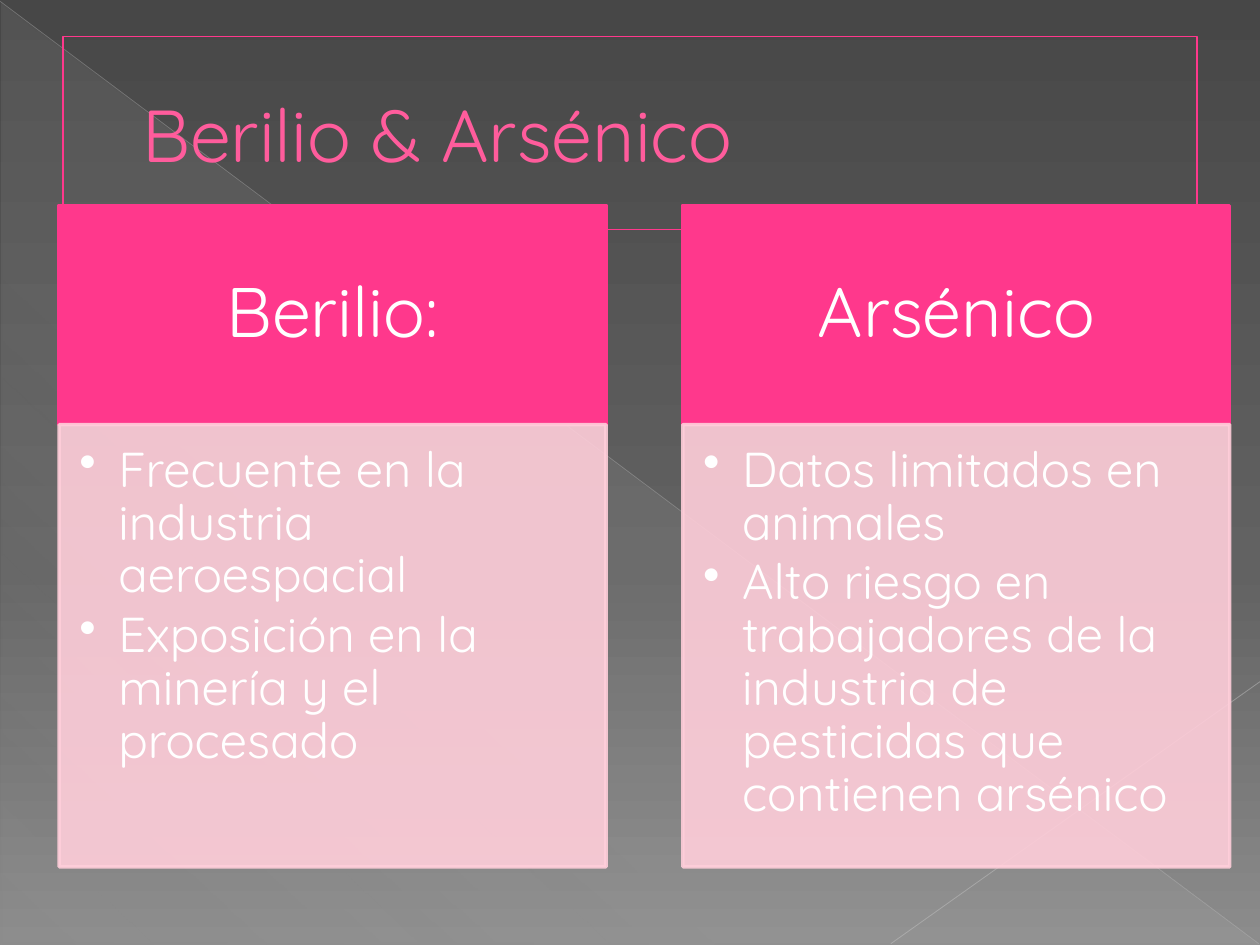
import pptx
import pptx.util
import pptx.dml.color
import pptx.enum.shapes
import pptx.enum.text
import pptx.oxml.ns
from lxml import etree

Inches = pptx.util.Inches
Pt = pptx.util.Pt
RGBColor = pptx.dml.color.RGBColor
Shape = pptx.enum.shapes.MSO_SHAPE
Anchor = pptx.enum.text.MSO_ANCHOR
Align = pptx.enum.text.PP_ALIGN
qn = pptx.oxml.ns.qn

FONT = "Quicksand"
PINK = RGBColor(0xFF, 0x38, 0x8C)
TITLE_PINK = RGBColor(0xFF, 0x5C, 0x9C)
TITLE_OUTLINE = RGBColor(0xB1, 0x27, 0x61)
PALE_PINK = RGBColor(0xFF, 0xCE, 0xDA)
WHITE = RGBColor(0xFF, 0xFF, 0xFF)
DARK_GRAY = RGBColor(0x47, 0x47, 0x47)
MID_GRAY = RGBColor(0x62, 0x62, 0x62)
LIGHT_GRAY = RGBColor(0x8C, 0x8C, 0x8C)
SHEEN = RGBColor(0xD2, 0xD2, 0xD2)
DIAGONAL_GRAY = RGBColor(0xBF, 0xBF, 0xBF)
CORNER_GRAY = RGBColor(0xC6, 0xC6, 0xC6)

COLUMN_LEFT, COLUMN_STEP, COLUMN_WIDTH = 0.47, 4.95, 4.34
HEADER_TOP, HEADER_HEIGHT, BODY_HEIGHT = 1.63, 1.74, 3.51
COLUMNS = [
    ("Berilio:", ["Frecuente en la industria aeroespacial",
                  "Exposición en la minería y el procesado"]),
    ("Arsénico", ["Datos limitados en animales",
                  "Alto riesgo en trabajadores de la industria de pesticidas "
                  "que contienen arsénico"]),
]


def add_color(parent, color, opacity=100):
    """Append an RGB colour with an opacity in percent."""
    srgb = etree.SubElement(parent, qn("a:srgbClr"), val=str(color))
    if opacity < 100:
        etree.SubElement(srgb, qn("a:alpha"), val=str(opacity * 1000))


def set_opacity(element, opacity):
    """Give every colour of the element's own properties an opacity."""
    for srgb in element.spPr.iter(qn("a:srgbClr")):
        etree.SubElement(srgb, qn("a:alpha"), val=str(opacity * 1000))


def set_gradient(fill, element, stops, angle):
    """Fill with a linear gradient at a clockwise angle."""
    fill.gradient()
    fill.gradient_angle = 360 - angle
    stop_list = next(element.iter(qn("a:gsLst")))
    for old_stop in list(stop_list):
        stop_list.remove(old_stop)
    for position, color, opacity in stops:
        stop = etree.SubElement(stop_list, qn("a:gs"), pos=str(position * 1000))
        add_color(stop, color, opacity)


def set_indent(paragraph, margin, indent):
    """Set the left margin and first-line indent of a paragraph."""
    properties = paragraph._p.get_or_add_pPr()
    properties.set("marL", str(Inches(margin)))
    properties.set("indent", str(Inches(indent)))
    return properties


def format_runs(paragraph, size, color):
    """Style all runs of a paragraph."""
    for run in paragraph.runs:
        run.font.name = FONT
        run.font.size = Pt(size)
        run.font.color.rgb = color


def add_diagonal(slide, start, end, color, width, opacity):
    """Draw a translucent background line."""
    diagonal = slide.shapes.add_connector(
        pptx.enum.shapes.MSO_CONNECTOR.STRAIGHT,
        *(Inches(value) for value in start + end))
    diagonal.line.color.rgb = color
    diagonal.line.width = Pt(width)
    set_opacity(diagonal.element, opacity)
    etree.SubElement(diagonal.element.spPr, qn("a:effectLst"))


def add_backdrop(slide):
    """Paint the gradient background, its sheen and its diagonals."""
    set_gradient(slide.background.fill, slide.element,
                 [(0, DARK_GRAY, 100), (60, MID_GRAY, 100),
                  (100, LIGHT_GRAY, 100)], 90)
    sheen = slide.shapes.add_shape(Shape.RIGHT_TRIANGLE, Inches(0.01),
                                   Inches(0.02), Inches(9.99), Inches(7.48))
    sheen.shadow.inherit = False
    sheen.line.fill.background()
    set_gradient(sheen.fill, sheen.element,
                 [(0, SHEEN, 10), (70, SHEEN, 8), (100, SHEEN, 1)], 133)
    add_diagonal(slide, (0, 0.01), (9.99, 7.49), DIAGONAL_GRAY, 0.39, 35)
    add_diagonal(slide, (10, 5.41), (7.07, 7.49), CORNER_GRAY, 0.47, 45)


def add_title(slide, text):
    """Place the framed title above the backdrop."""
    title = slide.shapes.title
    title.element.getparent().append(title.element)
    title.left, title.top = Inches(0.5), Inches(0.29)
    title.width, title.height = Inches(9), Inches(1.53)
    title.line.color.rgb = PINK
    title.line.width = Pt(0.75)
    frame = title.text_frame
    frame.text = text
    frame.auto_size = pptx.enum.text.MSO_AUTO_SIZE.NONE
    frame.vertical_anchor = Anchor.MIDDLE
    paragraph = frame.paragraphs[0]
    paragraph.alignment = Align.LEFT
    set_indent(paragraph, 0.53, 0)
    format_runs(paragraph, 42, TITLE_PINK)
    outline = etree.Element(qn("a:ln"), w=str(Pt(0.5)))
    add_color(etree.SubElement(outline, qn("a:solidFill")), TITLE_OUTLINE)
    paragraph.runs[0].font._element.insert(0, outline)


def add_panel(slide, left, top, height, color, insets, anchor):
    """Add a rectangular column part and return it."""
    panel = slide.shapes.add_shape(Shape.RECTANGLE, Inches(left), Inches(top),
                                   Inches(COLUMN_WIDTH), Inches(height))
    panel.shadow.inherit = False
    panel.fill.solid()
    panel.fill.fore_color.rgb = color
    panel.line.color.rgb = color
    panel.line.width = Pt(2)
    frame = panel.text_frame
    frame.word_wrap = True
    frame.vertical_anchor = anchor
    (frame.margin_left, frame.margin_top,
     frame.margin_right, frame.margin_bottom) = map(Inches, insets)
    return panel


def add_column(slide, left, heading, points):
    """Add a heading panel with its bulleted panel below."""
    header = add_panel(slide, left, HEADER_TOP, HEADER_HEIGHT, PINK,
                       (0.31, 0.18, 0.31, 0.18), Anchor.MIDDLE)
    header.text_frame.text = heading
    heading_line = header.text_frame.paragraphs[0]
    heading_line.alignment = Align.CENTER
    heading_line.line_spacing = 0.9
    format_runs(heading_line, 40, WHITE)

    body = add_panel(slide, left, HEADER_TOP + HEADER_HEIGHT, BODY_HEIGHT,
                     PALE_PINK, (0.16, 0.16, 0.22, 0.24), Anchor.TOP)
    set_opacity(body.element, 90)
    body.text_frame.text = "\n".join(points)
    for point in body.text_frame.paragraphs:
        point.alignment = Align.LEFT
        point.line_spacing = 0.9
        point.space_after = Pt(4)
        properties = set_indent(point, 0.31, -0.31)
        etree.SubElement(properties, qn("a:buChar"), char="•")
        format_runs(point, 28, WHITE)


def main():
    """Build the slide and save it."""
    presentation = pptx.Presentation()
    presentation.slide_width = Inches(10)
    presentation.slide_height = Inches(7.5)
    slide = presentation.slides.add_slide(presentation.slide_layouts[5])
    add_backdrop(slide)
    add_title(slide, "Berilio & Arsénico")
    for index, (heading, points) in enumerate(COLUMNS):
        add_column(slide, COLUMN_LEFT + index * COLUMN_STEP, heading, points)
    presentation.save("out.pptx")


if __name__ == "__main__":
    main()
